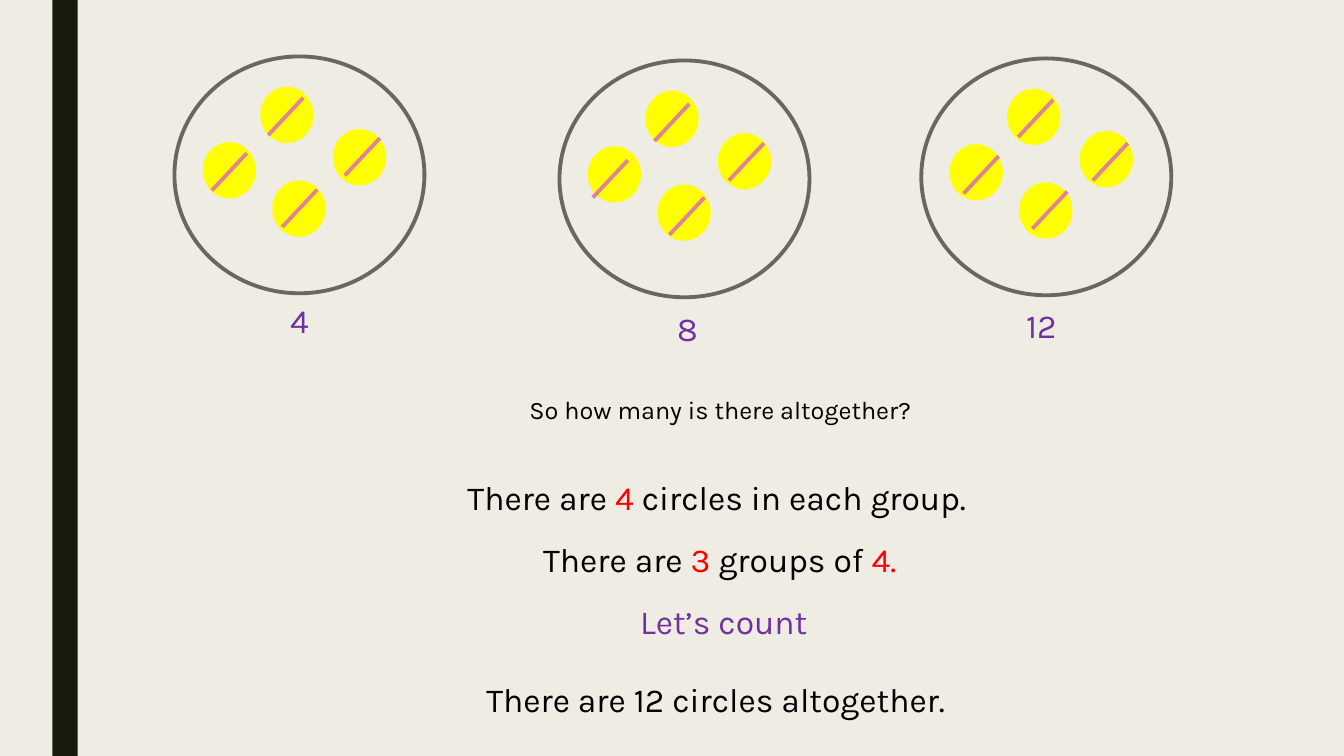
import pptx
import pptx.dml.color
import pptx.enum.shapes
import pptx.enum.text
import pptx.oxml.ns
import pptx.util
import lxml.etree

WIDTH = pptx.util.Inches(13.33)
HEIGHT = pptx.util.Inches(7.5)
COLUMNS = ROWS = 100

BLACK, RED, PURPLE = "000000", "FF0000", "7030A0"
YELLOW, GREY, PINK = "FFFF00", "686863", "E28394"
CREAM, DARK = "EFEDE3", "191B0E"
OUTLINE = pptx.util.Pt(2.75)

RING_SIZE = (18.6, 31.33)
COUNTER_SIZE = (3.68, 6.93)
COUNTER_OFFSETS = [(6.53, 4.27), (2.25, 11.6), (7.43, 16.67), (11.93, 9.87)]
STROKE_RUN, STROKE_RISE = 2.6, 4.93

CIRCLE_GROUPS = [
    ((12.98, 7.47), "4", (13.58, 39.07),
     [(0.45, 6.13), (0.53, 6.13), (0.6, 5.87), (0.75, 5.87)]),
    ((41.63, 8), "8", (42.45, 40.13),
     [(0.53, 6.4), (0.23, 6.53), (0.75, 6.4), (0.68, 6)]),
    ((68.55, 7.73), "12", (68.78, 39.73),
     [(0.68, 6.13), (0.9, 6.27), (0.83, 5.87), (0.83, 6.27)]),
]

SENTENCES = [
    (11.78, 62.4, [("There are ", BLACK), ("4", RED),
                   (" circles in each group. ", BLACK)]),
    (11.7, 70.67, [("There are ", BLACK), ("3 ", RED),
                   ("groups of ", BLACK), ("4.", RED)]),
    (12, 78.8, [("Let’s count", PURPLE)]),
    (11.7, 89.2, [("There are 12 circles altogether. ", BLACK)]),
]


def color(hex_string):
    return pptx.dml.color.RGBColor.from_string(hex_string)


def place(column, row):
    return round(column * WIDTH / COLUMNS), round(row * HEIGHT / ROWS)


def add_form(shapes, kind, at, size, fill=None, line=None):
    form = shapes.add_shape(kind, *place(*at), *place(*size))
    form.shadow.inherit = False
    if fill:
        form.fill.solid()
        form.fill.fore_color.rgb = color(fill)
    else:
        form.fill.background()
    if line:
        form.line.color.rgb = color(line)
        form.line.width = OUTLINE
    else:
        form.line.fill.background()


def add_stroke(shapes, column, row):
    stroke = shapes.add_connector(
        pptx.enum.shapes.MSO_CONNECTOR.STRAIGHT,
        *place(column, row), *place(column + STROKE_RUN, row - STROKE_RISE))
    stroke.line.color.rgb = color(PINK)
    stroke.line.width = OUTLINE
    lxml.etree.SubElement(stroke._element.spPr, pptx.oxml.ns.qn("a:effectLst"))


def add_text(shapes, parts, at, size=(83.7, 6.67), points=24, font="Karla"):
    frame = shapes.add_textbox(*place(*at), *place(*size)).text_frame
    frame.word_wrap = True
    frame.auto_size = pptx.enum.text.MSO_AUTO_SIZE.SHAPE_TO_FIT_TEXT
    sentence = frame.paragraphs[0]
    sentence.alignment = pptx.enum.text.PP_ALIGN.CENTER
    for words, tint in parts:
        run = sentence.add_run()
        run.text = words
        run.font.size = pptx.util.Pt(points)
        run.font.name = font
        run.font.color.rgb = color(tint)


def add_circle_group(shapes, corner, total, total_at, stroke_starts):
    oval = pptx.enum.shapes.MSO_SHAPE.OVAL
    members = shapes.add_group_shape().shapes
    add_form(members, oval, corner, RING_SIZE, line=GREY)
    counters = [(corner[0] + across, corner[1] + down)
                for across, down in COUNTER_OFFSETS]
    for counter in counters:
        add_form(members, oval, counter, COUNTER_SIZE, YELLOW, YELLOW)
    for (column, row), (across, down) in zip(counters, stroke_starts):
        add_stroke(shapes, column + across, row + down)
    add_text(shapes, [(total, PURPLE)], total_at, size=(17.4, 6.67))


def main():
    presentation = pptx.Presentation()
    presentation.slide_width, presentation.slide_height = WIDTH, HEIGHT
    slide = presentation.slides.add_slide(presentation.slide_layouts[6])
    slide.background.fill.solid()
    slide.background.fill.fore_color.rgb = color(CREAM)
    shapes = slide.shapes

    add_form(shapes, pptx.enum.shapes.MSO_SHAPE.RECTANGLE,
             (3.9, 0), (1.88, ROWS), fill=DARK)
    for circle_group in CIRCLE_GROUPS:
        add_circle_group(shapes, *circle_group)
    add_text(shapes, [("So how many is there altogether? ", BLACK)],
             (15.23, 51.47), size=(77.18, 5.33), points=18)
    for column, row, parts in SENTENCES:
        add_text(shapes, parts, (column, row))

    presentation.save("out.pptx")


if __name__ == "__main__":
    main()
